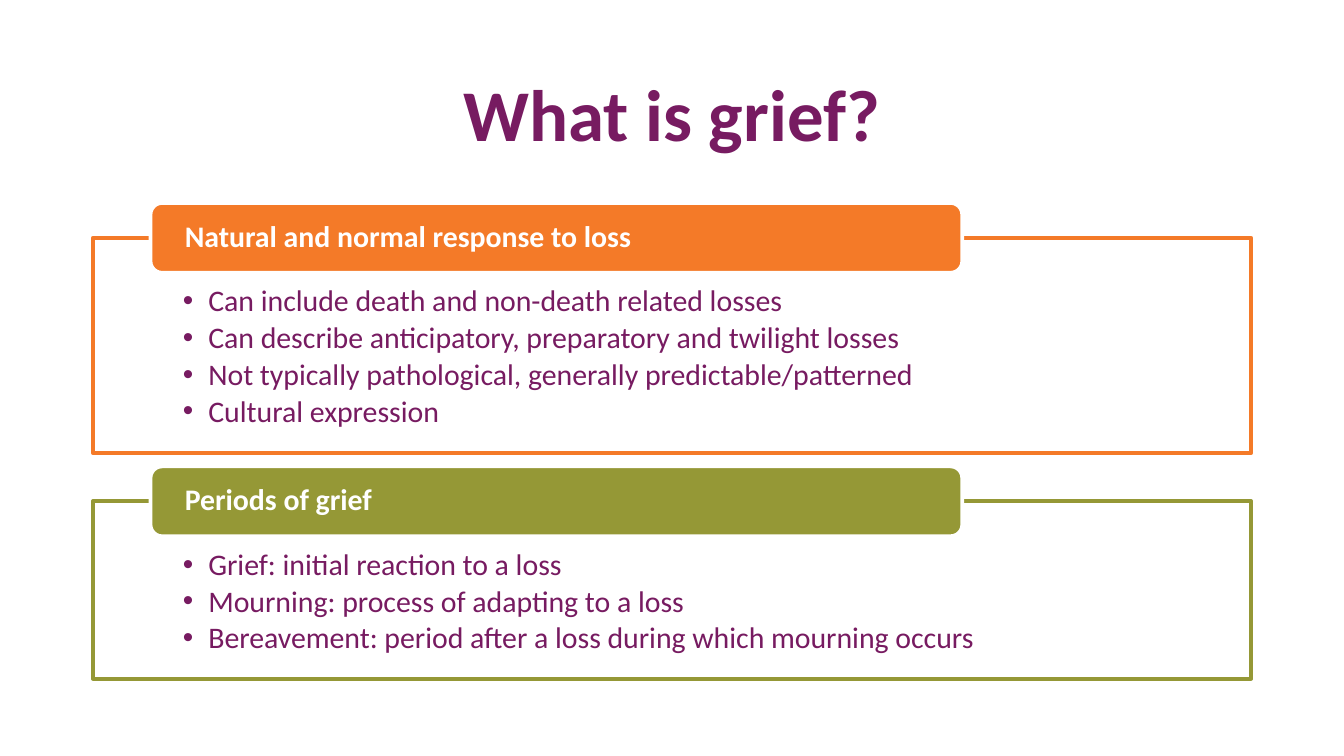
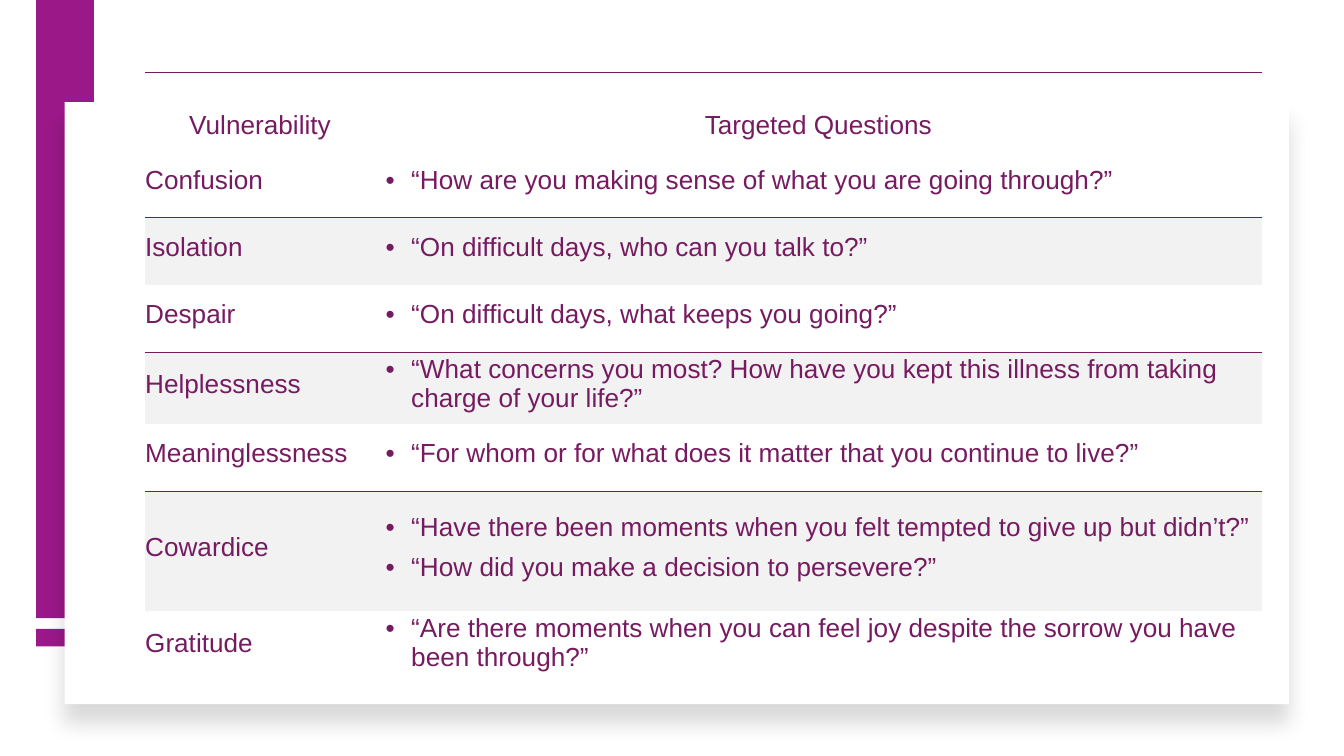
from lxml import etree
from pptx import Presentation
from pptx.dml.color import RGBColor
from pptx.enum.shapes import MSO_SHAPE
from pptx.enum.text import MSO_ANCHOR, PP_ALIGN
from pptx.oxml import parse_xml
from pptx.oxml.ns import nsdecls, qn
from pptx.util import Inches, Pt

RECTANGLE = MSO_SHAPE.RECTANGLE
ROUNDED = MSO_SHAPE.ROUNDED_RECTANGLE
TOP, MIDDLE, BOTTOM = MSO_ANCHOR.TOP, MSO_ANCHOR.MIDDLE, MSO_ANCHOR.BOTTOM
LEFT, CENTER = PP_ALIGN.LEFT, PP_ALIGN.CENTER

PLUM = RGBColor(0x77, 0x1B, 0x61)
MAGENTA = RGBColor(0x9B, 0x18, 0x89)
ORANGE = RGBColor(0xF4, 0x7A, 0x28)
OLIVE = RGBColor(0x95, 0x98, 0x36)
WHITE = RGBColor(0xFF, 0xFF, 0xFF)
LIGHT_GREY = RGBColor(0xF2, 0xF2, 0xF2)

TITLE_FONT = {"name": "Calibri", "size": Pt(39), "bold": True}
HEADING_FONT = {"name": "Calibri", "size": Pt(16), "bold": True}
LIST_FONT = {"name": "Calibri", "size": Pt(16), "bold": False}
TABLE_FONT = {"name": "Arial", "size": Pt(14), "bold": False}

LIST_SPACING = {"line_spacing": 0.9, "space_after": Pt(2.4)}
BULLET_INDENT = Inches(0.19)
NO_GRID_STYLE = "{2D5ABB26-0587-4C30-8999-92F81FD0307C}"

# Heading, colour, top of the frame, height of the frame, list items
PANELS = [
    ("Natural and normal response to loss", ORANGE, 1.77, 1.6, [
        "Can include death and non-death related losses",
        "Can describe anticipatory, preparatory and twilight losses",
        "Not typically pathological, generally predictable/patterned",
        "Cultural expression",
    ]),
    ("Periods of grief", OLIVE, 3.73, 1.32, [
        "Grief: initial reaction to a loss",
        "Mourning: process of adapting to a loss",
        "Bereavement: period after a loss during which mourning occurs",
    ]),
]

TABLE_HEADINGS = ["Vulnerability", "Targeted Questions"]
QUESTIONS = [
    ("Confusion", ["“How are you making sense of what you are going through?”"]),
    ("Isolation", ["“On difficult days, who can you talk to?”"]),
    ("Despair", ["“On difficult days, what keeps you going?”"]),
    ("Helplessness", ["“What concerns you most? How have you kept this illness "
                      "from taking charge of your life?”"]),
    ("Meaninglessness", ["“For whom or for what does it matter that you continue to live?”"]),
    ("Cowardice", ["“Have there been moments when you felt tempted to give up but didn’t?”",
                   "“How did you make a decision to persevere?”"]),
    ("Gratitude", ["“Are there moments when you can feel joy despite the sorrow "
                   "you have been through?”"]),
]
COLUMN_WIDTHS = [1.79, 6.52]
ROW_HEIGHTS = [0.58, 0.5, 0.5, 0.5, 0.5, 0.5, 0.89, 0.5]


def set_attributes(target, values):
    for name, value in values.items():
        setattr(target, name, value)


def set_margins(target, left, top, right, bottom):
    set_attributes(target, {
        "margin_left": Inches(left), "margin_top": Inches(top),
        "margin_right": Inches(right), "margin_bottom": Inches(bottom)})


def add_bullet(paragraph):
    properties = paragraph._p.get_or_add_pPr()
    properties.set("marL", str(BULLET_INDENT))
    properties.set("indent", str(-BULLET_INDENT))
    etree.SubElement(properties, qn("a:buFont")).set("typeface", "Arial")
    etree.SubElement(properties, qn("a:buChar")).set("char", "•")


def write_text(text_frame, lines, font, color, alignment=LEFT, bullets=False,
               spacing=None, space_between=None):
    for index, line in enumerate(lines):
        paragraph = text_frame.add_paragraph() if index else text_frame.paragraphs[0]
        if bullets:
            add_bullet(paragraph)
        paragraph.alignment = alignment
        set_attributes(paragraph, spacing or {})
        if index and space_between:
            paragraph.space_before = space_between
        run = paragraph.add_run()
        run.text = line
        set_attributes(run.font, font)
        run.font.color.rgb = color


def add_box(slide, kind, left, top, width, height, fill, line=None):
    shape = slide.shapes.add_shape(
        kind, Inches(left), Inches(top), Inches(width), Inches(height))
    shape.shadow.inherit = False
    shape.fill.solid()
    shape.fill.fore_color.rgb = fill
    if line is None:
        shape.line.fill.background()
    else:
        shape.line.color.rgb = line
        shape.line.width = Pt(2)
    return shape


def add_title(slide, text):
    title = slide.shapes.title
    set_attributes(title, {"left": Inches(0.69), "top": Inches(0.46),
                           "width": Inches(8.62), "height": Inches(0.93)})
    title.text_frame.vertical_anchor = TOP
    write_text(title.text_frame, [text], TITLE_FONT, PLUM, CENTER)


def add_panel(slide, heading, color, top, height, items):
    """Add a framed list with a heading tab over its top edge."""
    frame = add_box(slide, RECTANGLE, 0.69, top, 8.62, height, WHITE, color)
    frame.text_frame.vertical_anchor = TOP
    set_margins(frame.text_frame, 0.67, 0.36, 0.67, 0.12)
    write_text(frame.text_frame, items, LIST_FONT, PLUM, bullets=True, spacing=LIST_SPACING)

    tab = add_box(slide, ROUNDED, 1.12, top - 0.26, 6.04, 0.52, color, WHITE)
    tab.text_frame.vertical_anchor = MIDDLE
    set_margins(tab.text_frame, 0.23, 0, 0.23, 0)
    write_text(tab.text_frame, [heading], HEADING_FONT, WHITE, spacing={"line_spacing": 0.9})


def add_card_shadow(shape):
    effects = shape._element.spPr.find(qn("a:effectLst"))
    effects.append(parse_xml(
        f'<a:outerShdw {nsdecls("a")} blurRad="{Pt(11)}" dist="{Pt(10)}" dir="5400000" '
        'algn="t" rotWithShape="0"><a:srgbClr val="000000"><a:alpha val="15000"/>'
        '</a:srgbClr></a:outerShdw>'))


def add_cell_border(cell, side):
    """Draw one border of a cell; side is T or B."""
    cell._tc.get_or_add_tcPr().insert(0, parse_xml(
        f'<a:ln{side} {nsdecls("a")} w="{Pt(0.75)}"><a:solidFill>'
        f'<a:srgbClr val="{PLUM}"/></a:solidFill></a:ln{side}>'))


def fill_cell(cell, lines, anchor, alignment=LEFT, bullets=False, shade=None):
    cell.vertical_anchor = anchor
    set_margins(cell, 0, 0.02, 0.08, 0.08)
    if shade is None:
        cell.fill.background()
    else:
        cell.fill.solid()
        cell.fill.fore_color.rgb = shade
    write_text(cell.text_frame, lines, TABLE_FONT, PLUM, alignment, bullets,
               space_between=Pt(6))


def add_question_table(slide):
    graphic_frame = slide.shapes.add_table(
        len(ROW_HEIGHTS), len(COLUMN_WIDTHS), Inches(1.08), Inches(0.54),
        Inches(sum(COLUMN_WIDTHS)), Inches(sum(ROW_HEIGHTS)))
    table = graphic_frame.table
    set_attributes(table, {"first_row": False, "horz_banding": False})
    table._tbl.tblPr.find(qn("a:tableStyleId")).text = NO_GRID_STYLE
    for column, width in zip(table.columns, COLUMN_WIDTHS):
        column.width = Inches(width)
    for row, height in zip(table.rows, ROW_HEIGHTS):
        row.height = Inches(height)

    for column, heading in enumerate(TABLE_HEADINGS):
        cell = table.cell(0, column)
        fill_cell(cell, [heading], BOTTOM, CENTER)
        add_cell_border(cell, "T")

    for row, (vulnerability, questions) in enumerate(QUESTIONS, start=1):
        shade = LIGHT_GREY if row % 2 == 0 else None
        fill_cell(table.cell(row, 0), [vulnerability], MIDDLE, shade=shade)
        fill_cell(table.cell(row, 1), questions, MIDDLE, bullets=True, shade=shade)
        if shade is None and row < len(QUESTIONS):
            for cell in table.rows[row].cells:
                add_cell_border(cell, "B")


def build_grief_slide(presentation):
    slide = presentation.slides.add_slide(presentation.slide_layouts[5])
    add_title(slide, "What is grief?")
    for panel in PANELS:
        add_panel(slide, *panel)


def build_questions_slide(presentation):
    slide = presentation.slides.add_slide(presentation.slide_layouts[6])
    for top, height in [(4.68, 0.13), (0, 4.6)]:
        add_box(slide, RECTANGLE, 0.27, top, 0.43, height, MAGENTA)
    card = add_box(slide, RECTANGLE, 0.48, 0.76, 9.11, 4.48, WHITE)
    add_card_shadow(card)
    add_question_table(slide)


def main():
    presentation = Presentation()
    presentation.slide_width = Inches(10)
    presentation.slide_height = presentation.slide_width * 9 // 16
    build_grief_slide(presentation)
    build_questions_slide(presentation)
    presentation.save("out.pptx")


if __name__ == "__main__":
    main()
